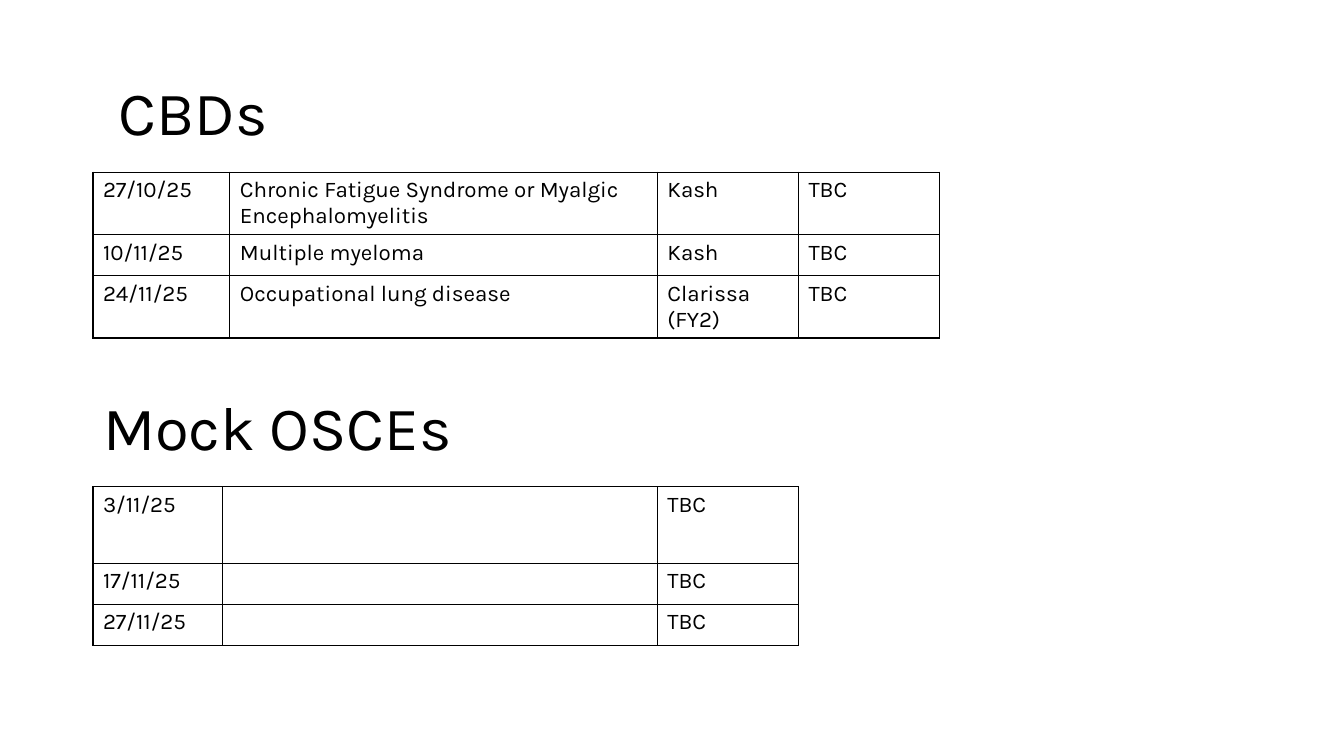
from lxml import etree
from pptx import Presentation
from pptx.dml.color import RGBColor
from pptx.enum import text
from pptx.oxml import ns
from pptx.util import Pt

INK = "000000"
HEADING = {"name": "Karla", "size": Pt(44), "bold": False}
ENTRY = {"name": "Karla", "size": Pt(16), "bold": False}
FRAME = {
    "word_wrap": True,
    "auto_size": text.MSO_AUTO_SIZE.NONE,
    "vertical_anchor": text.MSO_ANCHOR.MIDDLE,
}
SINGLE_ROW = 29.2

CBDS = [
    ["27/10/25", "Chronic Fatigue Syndrome or Myalgic Encephalomyelitis", "Kash", "TBC"],
    ["10/11/25", "Multiple myeloma", "Kash", "TBC"],
    ["24/11/25", "Occupational lung disease", "Clarissa (FY2)", "TBC"],
]
OSCES = [[date, "", "TBC"] for date in ("3/11/25", "17/11/25", "27/11/25")]


def colour(value):
    return RGBColor.from_string(value)


def apply(target, values):
    for attribute, value in values.items():
        setattr(target, attribute, value)


def write(paragraph, words, style):
    run = paragraph.add_run()
    run.text = words
    apply(run.font, style)
    run.font.color.rgb = colour(INK)


def add_heading(holder, words, left, top):
    apply(holder, {"left": Pt(left), "top": Pt(top), "width": Pt(828), "height": Pt(104.4)})
    apply(holder.text_frame, FRAME)
    paragraph = holder.text_frame.paragraphs[0]
    apply(paragraph, {"alignment": text.PP_ALIGN.LEFT, "line_spacing": 0.9})
    write(paragraph, words, HEADING)


def add_borders(cell):
    properties = cell._tc.get_or_add_tcPr()
    for position, side in enumerate(("lnL", "lnR", "lnT", "lnB")):
        line = etree.Element(ns.qn(f"a:{side}"), w=str(Pt(1)))
        fill = etree.SubElement(line, ns.qn("a:solidFill"))
        etree.SubElement(fill, ns.qn("a:srgbClr"), val=INK)
        properties.insert(position, line)


def add_schedule(slide, sessions, left, top, widths, heights):
    schedule = slide.shapes.add_table(
        len(sessions), len(widths), Pt(left), Pt(top), Pt(sum(widths)), Pt(sum(heights))
    ).table
    apply(schedule, {"first_row": False, "horz_banding": False})
    for column, width in zip(schedule.columns, widths):
        column.width = Pt(width)
    for row, height, session in zip(schedule.rows, heights, sessions):
        row.height = Pt(height)
        for cell, words in zip(row.cells, session):
            cell.fill.background()
            add_borders(cell)
            if words:
                write(cell.text_frame.paragraphs[0], words, ENTRY)


def build_timetable(deck):
    slide = deck.slides.add_slide(deck.slide_layouts[5])
    add_heading(slide.shapes.title, "Mock OSCEs", 66.4, 255.6)
    add_schedule(slide, CBDS, 66.4, 123, [97.8, 305.4, 100.8, 100.8], [SINGLE_ROW] * 3)
    cbds_heading = slide.shapes.add_textbox(0, 0, 0, 0)
    add_heading(cbds_heading, "CBDs", 77.5, 30.3)
    add_schedule(slide, OSCES, 66.4, 347.6, [92.6, 310.6, 100.8], [54.8, SINGLE_ROW, SINGLE_ROW])


def main():
    deck = Presentation()
    apply(deck, {"slide_width": Pt(960), "slide_height": Pt(540)})
    build_timetable(deck)
    deck.save("out.pptx")


if __name__ == "__main__":
    main()
